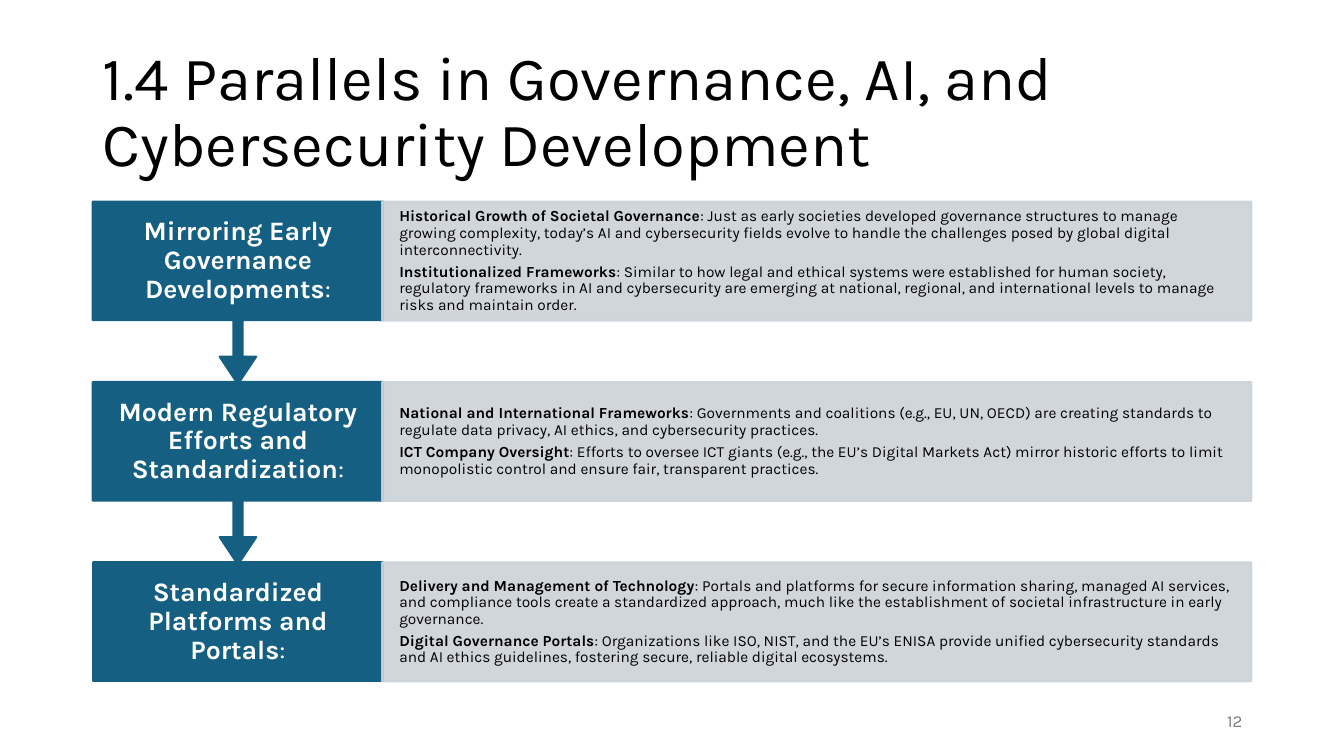
"""Builds the slide on parallels in governance, AI and cybersecurity."""
from dataclasses import dataclass

from lxml import etree
from pptx import Presentation
from pptx.dml.color import RGBColor
from pptx.enum.shapes import MSO_SHAPE
from pptx.enum.text import MSO_ANCHOR, MSO_AUTO_SIZE, PP_ALIGN
from pptx.oxml.ns import qn
from pptx.util import Inches, Pt

RECTANGLE = MSO_SHAPE.RECTANGLE
DOWN_CALLOUT = MSO_SHAPE.DOWN_ARROW_CALLOUT
MIDDLE = MSO_ANCHOR.MIDDLE
NO_FIT = MSO_AUTO_SIZE.NONE
LEFT, CENTER, RIGHT = PP_ALIGN.LEFT, PP_ALIGN.CENTER, PP_ALIGN.RIGHT


@dataclass(frozen=True)
class Theme:
    """Colours and type sizes of the slide."""
    font: str = "Karla"
    black: str = "000000"
    white: str = "FFFFFF"
    blue: str = "156082"
    gray: str = "CCD2D8"
    number_gray: str = "797979"
    title_size: int = 44
    label_size: int = 19
    detail_size: int = 11
    number_size: int = 12
    line_spacing: float = 0.9
    space_after: float = 0.35
    outline: float = 1.5


class Page:
    """Draws each kind of element on one slide."""

    def __init__(self, deck, theme):
        self.slide = deck.slides.add_slide(deck.slide_layouts[5])
        self.theme = theme

    def set_font(self, font, size, color):
        font.name = self.theme.font
        font.size = Pt(size)
        font.color.rgb = RGBColor.from_string(color)

    def title(self, text, left, top, width, height):
        box = self.slide.shapes.title
        box.left, box.top = Inches(left), Inches(top)
        box.width, box.height = Inches(width), Inches(height)
        frame = box.text_frame
        frame.text = text
        frame.vertical_anchor = MIDDLE
        frame.auto_size = NO_FIT
        para = frame.paragraphs[0]
        para.alignment = LEFT
        para.line_spacing = self.theme.line_spacing
        self.set_font(para.font, self.theme.title_size, self.theme.black)

    def block(self, kind, left, top, width, height, color, opacity=100):
        box = self.slide.shapes.add_shape(
            kind, Inches(left), Inches(top), Inches(width), Inches(height))
        box.shadow.inherit = False
        box.fill.solid()
        box.line.width = Pt(self.theme.outline)
        for paint in (box.fill.fore_color, box.line.color):
            paint.rgb = RGBColor.from_string(color)
        if opacity < 100:
            for tint in box._element.spPr.iter(qn("a:srgbClr")):
                etree.SubElement(tint, qn("a:alpha"), val=str(opacity * 1000))
        return box

    def fill_text(self, box, entries, size, color, align, side_inset):
        frame = box.text_frame
        frame.word_wrap = True
        frame.vertical_anchor = MIDDLE
        frame.margin_left = frame.margin_right = Inches(side_inset)
        frame.margin_top = frame.margin_bottom = Inches(0.15)
        for index, (lead, rest) in enumerate(entries):
            para = frame.add_paragraph() if index else frame.paragraphs[0]
            para.alignment = align
            para.line_spacing = self.theme.line_spacing
            para.space_after = Pt(size * self.theme.space_after)
            self.set_font(para.font, size, color)
            for text, bold in ((lead, True), (rest, False)):
                span = para.add_run()
                span.text = text
                span.font.bold = bold

    def step(self, label, details, top, has_arrow):
        theme = self.theme
        if has_arrow:
            box = self.block(DOWN_CALLOUT, LABEL_LEFT, top, LABEL_WIDTH,
                             CALLOUT_HEIGHT, theme.blue)
            for index, value in enumerate(CALLOUT_SHAPE):
                box.adjustments[index] = value
        else:
            box = self.block(RECTANGLE, LABEL_LEFT, top, LABEL_WIDTH,
                             ROW_HEIGHT, theme.blue)
        self.fill_text(box, [(label, ":")], theme.label_size, theme.white, CENTER, 0.2)
        panel = self.block(RECTANGLE, PANEL_LEFT, top, PANEL_WIDTH,
                           ROW_HEIGHT, theme.gray, opacity=90)
        self.fill_text(panel, details, theme.detail_size, theme.black, LEFT, 0.17)

    def number(self, text, left, top, width, height):
        box = self.slide.shapes.add_textbox(
            Inches(left), Inches(top), Inches(width), Inches(height))
        frame = box.text_frame
        frame.word_wrap = True
        frame.vertical_anchor = MIDDLE
        para = frame.paragraphs[0]
        para.text = text
        para.alignment = RIGHT
        self.set_font(para.font, self.theme.number_size, self.theme.number_gray)


LABEL_LEFT, LABEL_WIDTH = 0.92, 2.88
PANEL_LEFT, PANEL_WIDTH = 3.79, 8.62
FIRST_TOP, ROW_PITCH, ROW_HEIGHT = 2, 1.79, 1.18
CALLOUT_HEIGHT = 1.81
CALLOUT_SHAPE = (0.05, 0.1, 0.15, 0.65)

STEPS = [
    ("Mirroring Early Governance Developments", [
        ("Historical Growth of Societal Governance",
         ": Just as early societies developed governance structures to manage "
         "growing complexity, today’s AI and cybersecurity fields evolve to "
         "handle the challenges posed by global digital interconnectivity."),
        ("Institutionalized Frameworks",
         ": Similar to how legal and ethical systems were established for human "
         "society, regulatory frameworks in AI and cybersecurity are emerging at "
         "national, regional, and international levels to manage risks and "
         "maintain order."),
    ]),
    ("Modern Regulatory Efforts and Standardization", [
        ("National and International Frameworks",
         ": Governments and coalitions (e.g., EU, UN, OECD) are creating "
         "standards to regulate data privacy, AI ethics, and cybersecurity "
         "practices."),
        ("ICT Company Oversight",
         ": Efforts to oversee ICT giants (e.g., the EU’s Digital Markets Act) "
         "mirror historic efforts to limit monopolistic control and ensure fair, "
         "transparent practices."),
    ]),
    ("Standardized Platforms and Portals", [
        ("Delivery and Management of Technology",
         ": Portals and platforms for secure information sharing, managed AI "
         "services, and compliance tools create a standardized approach, much "
         "like the establishment of societal infrastructure in early governance."),
        ("Digital Governance Portals",
         ": Organizations like ISO, NIST, and the EU’s ENISA provide unified "
         "cybersecurity standards and AI ethics guidelines, fostering secure, "
         "reliable digital ecosystems."),
    ]),
]


def main():
    deck = Presentation()
    deck.slide_width, deck.slide_height = Inches(13.33), Inches(7.5)
    page = Page(deck, Theme())
    page.title("1.4 Parallels in Governance, AI, and Cybersecurity Development",
               0.92, 0.4, 11.5, 1.45)
    last = len(STEPS) - 1
    for index, (label, details) in reversed(list(enumerate(STEPS))):
        page.step(label, details, FIRST_TOP + index * ROW_PITCH, index < last)
    page.number("12", 9.42, 6.95, 3, 0.4)
    deck.save("out.pptx")


if __name__ == "__main__":
    main()
